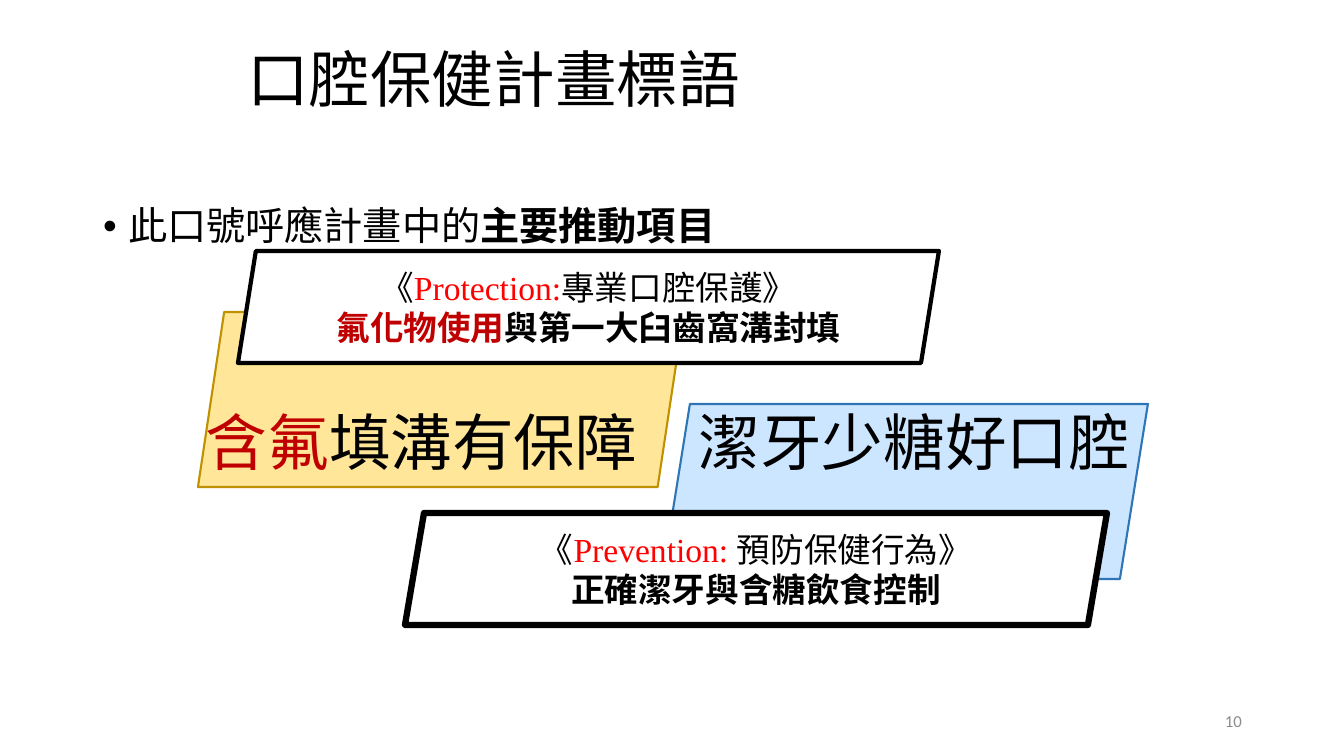
from lxml import etree
from pptx import Presentation, util as u
from pptx.dml.color import RGBColor
from pptx.enum import lang, shapes, text
from pptx.oxml.ns import qn

SERIF, SANS = "Times New Roman", "Calibri"
BLACK, RED, DARK_RED = "000000", "FF0000", "C00000"

# Content: each run is (text, colour, bold)
TITLE = [("口腔保健計畫標語", BLACK, False)]
BULLET = [("此口號呼應計畫中的", BLACK, False), ("主要推動項目", BLACK, True)]
SLOGAN = [("含氟", DARK_RED, False), ("填溝有保障\u3000潔牙少糖好口腔".replace("\u3000", "　"), BLACK, False)]
NUMBER = [("10", "8C8C8C", False)]
PREVENTION = [
    [("《", BLACK, False), ("Prevention: ", RED, False), ("預防保健行為》", BLACK, False)],
    [("正確潔牙與含糖飲食控制", BLACK, True)],
]
PROTECTION = [
    [("《", BLACK, False), ("Protection:", RED, False), ("專業口腔保護》", BLACK, False)],
    [("氟化物使用", DARK_RED, True), ("與第一大臼齒窩溝封填", BLACK, True)],
]
# Panels, back to front: box in px, slant, fill, line, line width, paragraphs
PANELS = [
    ((198, 312, 486, 175), 0.15, "FFE699", "BF9000", 1.5, []),
    ((662, 404, 486, 175), 0.16, "CDE6FF", "2E75B6", 1.5, []),
    ((405, 513, 702, 112), 0.17, "FFFFFF", BLACK, 4.5, PREVENTION),
    ((238, 251, 701, 112), 0.16, "FFFFFF", BLACK, 3, PROTECTION),
]


def px(n):
    return round(n * 914400 / 100.8)


def colour(value):
    return RGBColor.from_string(value)


def place(sp, box):
    sp.left, sp.top, sp.width, sp.height = map(px, box)


def write(sp, paragraphs, size, font, align=text.PP_ALIGN.LEFT,
          anchor=text.MSO_ANCHOR.MIDDLE, wrap=True):
    tf = sp.text_frame
    tf.word_wrap = wrap
    tf.auto_size = text.MSO_AUTO_SIZE.NONE
    tf.vertical_anchor = anchor
    for i, runs in enumerate(paragraphs):
        p = tf.add_paragraph() if i else tf.paragraphs[0]
        p.alignment = align
        for words, hue, bold in runs:
            r = p.add_run()
            r.text = words
            r.font.size, r.font.name, r.font.bold = u.Pt(size), font, bold
            r.font.color.rgb = colour(hue)
            r.font.language_id = lang.MSO_LANGUAGE_ID.TRADITIONAL_CHINESE
    return tf


prs = Presentation()
prs.slide_width, prs.slide_height = px(1344), px(756)
s = prs.slides.add_slide(prs.slide_layouts[1])

# Title
title, body = s.placeholders[0], s.placeholders[1]
place(title, (237, 10, 869, 146))
write(title, [TITLE], 44, SANS).paragraphs[0].line_spacing = 0.9

# Bullet
place(body, (93, 202, 1159, 480))
p = write(body, [BULLET], 28, SERIF, anchor=text.MSO_ANCHOR.TOP).paragraphs[0]
p.line_spacing, p.space_before = 0.9, u.Pt(0)
pPr = p._p.get_or_add_pPr()
pPr.set("marL", str(px(25)))
pPr.set("indent", str(px(-25)))
etree.SubElement(pPr, qn("a:buFont")).set("typeface", "Arial")
etree.SubElement(pPr, qn("a:buChar")).set("char", "•")

# Slanted panels
for box, slant, fill, line, width, paragraphs in PANELS:
    sp = s.shapes.add_shape(shapes.MSO_SHAPE.PARALLELOGRAM, *map(px, box))
    sp.adjustments[0] = slant
    sp.shadow.inherit = False
    sp.fill.solid()
    sp.fill.fore_color.rgb = colour(fill)
    sp.line.color.rgb = colour(line)
    sp.line.width = u.Pt(width)
    if paragraphs:
        write(sp, paragraphs, 24, SERIF, text.PP_ALIGN.CENTER)

# Slogan across the two coloured panels
slogan = s.shapes.add_textbox(*map(px, (196, 399, 954, 85)))
write(slogan, [SLOGAN], 44, SERIF, anchor=text.MSO_ANCHOR.TOP, wrap=False)

# Page number
number = s.shapes.add_textbox(*map(px, (950, 701, 302, 40)))
write(number, [NUMBER], 12, SANS, text.PP_ALIGN.RIGHT)

prs.save("out.pptx")
